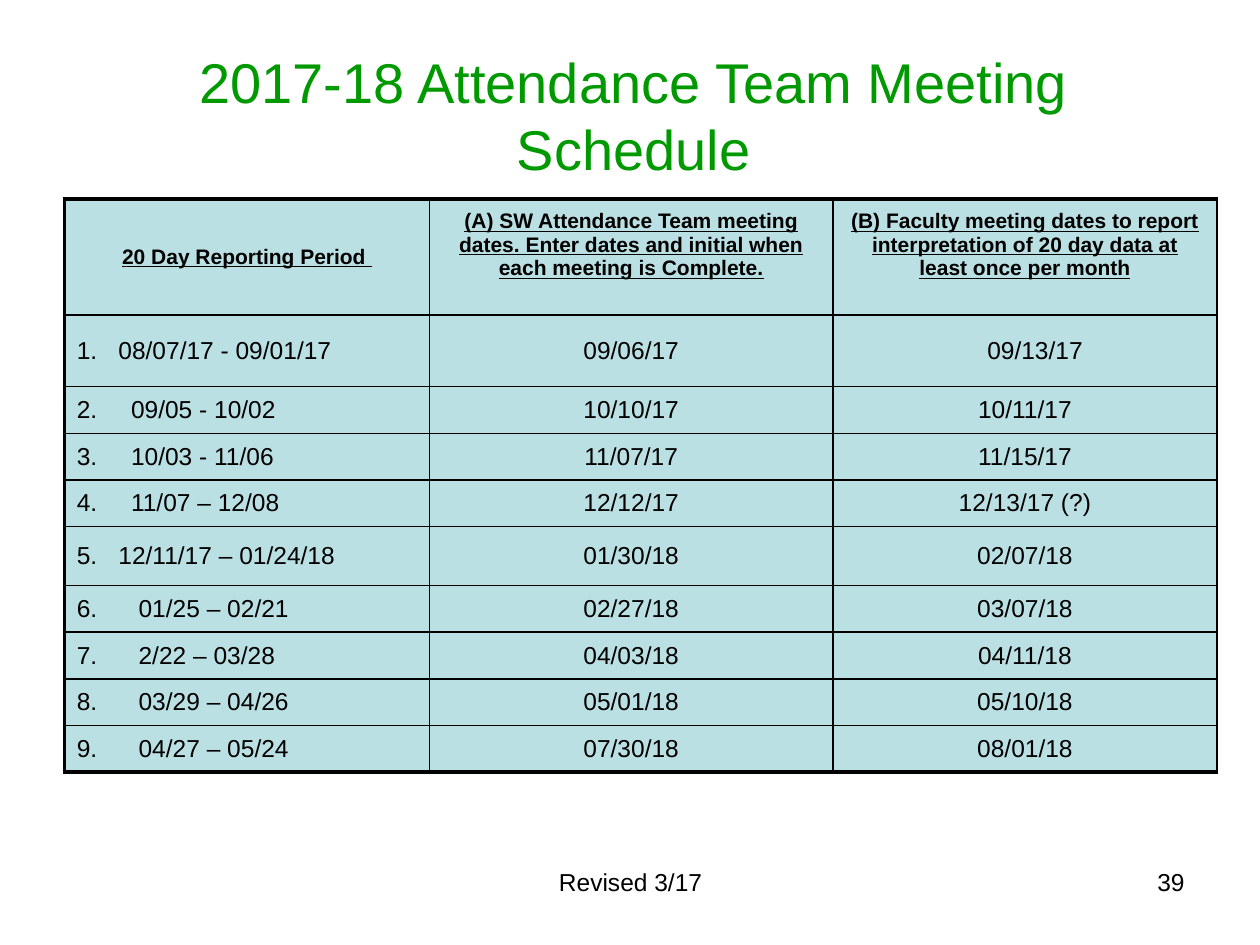
from lxml import etree
from pptx import Presentation
from pptx import util as u
from pptx.dml.color import RGBColor
from pptx.enum import text as t
from pptx.oxml import ns

INK, GREEN, PALE = "000000", "009900", "BBE0E3"
COLS = [2.9, 3.2, 3.05]
ROWS = [0.92, 0.57] + [0.37] * 3 + [0.47] + [0.37] * 4
HEADS = [
    "20 Day Reporting Period ",
    "(A) SW Attendance Team meeting dates. Enter dates and initial when each meeting is Complete.",
    "(B) Faculty meeting dates to report interpretation of 20 day data at least once per month",
]
NEAR, MID, FAR = 0.33, 0.43, 0.49
DATES = [
    (NEAR, "08/07/17 - 09/01/17", "09/06/17", "09/13/17"),
    (MID, "09/05 - 10/02", "10/10/17", "10/11/17"),
    (MID, "10/03 - 11/06", "11/07/17", "11/15/17"),
    (MID, "11/07 – 12/08", "12/12/17", "12/13/17 (?)"),
    (NEAR, "12/11/17 – 01/24/18", "01/30/18", "02/07/18"),
    (FAR, "01/25 – 02/21", "02/27/18", "03/07/18"),
    (FAR, "2/22 – 03/28", "04/03/18", "04/11/18"),
    (FAR, "03/29 – 04/26", "05/01/18", "05/10/18"),
    (FAR, "04/27 – 05/24", "07/30/18", "08/01/18"),
]
LEFT, MIDDLE, RIGHT = t.PP_ALIGN.LEFT, t.PP_ALIGN.CENTER, t.PP_ALIGN.RIGHT


def color(code):
    """Turn a hex string into a colour."""
    return RGBColor.from_string(code)


def write(frame, words, size, align, ink=INK, head=False):
    """Add one run to the first paragraph and return the paragraph."""
    para = frame.paragraphs[0]
    para.alignment = align
    run = para.add_run()
    run.text = words
    font = run.font
    font.name, font.size = "Arial", u.Pt(size)
    font.bold, font.underline = head, head
    font.color.rgb = color(ink)
    return para


def label(slide, box, words, size, align, ink=INK, anchor=t.MSO_ANCHOR.TOP, pad=0.1):
    """Place a wrapped line of text in a box."""
    frame = slide.shapes.add_textbox(*map(u.Inches, box)).text_frame
    frame.word_wrap = True
    frame.vertical_anchor = anchor
    frame.margin_left = frame.margin_right = u.Inches(pad)
    write(frame, words, size, align, ink)


def stop(para, place):
    """Set a left tab stop in inches."""
    tabs = etree.SubElement(para._p.get_or_add_pPr(), ns.qn("a:tabLst"))
    etree.SubElement(tabs, ns.qn("a:tab"), pos=str(u.Inches(place)), algn="l")


def edge(cell, row, col):
    """Fill a cell and draw its four borders."""
    cell.fill.solid()
    cell.fill.fore_color.rgb = color(PALE)
    thick = {"L": col == 0, "R": False, "T": row == 0, "B": row == len(ROWS) - 1}
    props = cell._tc.get_or_add_tcPr()
    for spot, (side, bold) in enumerate(thick.items()):
        line = etree.Element(ns.qn(f"a:ln{side}"), w=str(u.Pt(2.25 if bold else 1)))
        fill = etree.SubElement(line, ns.qn("a:solidFill"))
        etree.SubElement(fill, ns.qn("a:srgbClr"), val=INK)
        props.insert(spot, line)


def schedule(slide, box):
    """Build the table of periods and meeting dates."""
    table = slide.shapes.add_table(len(ROWS), len(COLS), *map(u.Inches, box)).table
    for col, width in zip(table.columns, COLS):
        col.width = u.Inches(width)
    for row, height in zip(table.rows, ROWS):
        row.height = u.Inches(height)
    for r in range(len(ROWS)):
        for c in range(len(COLS)):
            cell = table.cell(r, c)
            cell.vertical_anchor = t.MSO_ANCHOR.MIDDLE
            edge(cell, r, c)
            if r == 0:
                write(cell.text_frame, HEADS[c], 12, MIDDLE, head=True)
                if c:
                    cell.margin_bottom = u.Inches(0.24)
                continue
            tab, *words = DATES[r - 1]
            if c:
                write(cell.text_frame, words[c - 1 + 1], 14, MIDDLE)
            else:
                stop(write(cell.text_frame, f"{r}.\t{words[0]}", 14, LEFT), tab)
    table.cell(1, 2).margin_left = u.Inches(0.26)


def footer(slide, top, height):
    """Place the revision note and the page number."""
    label(slide, (3.42, top, 3.17, height), "Revised 3/17", 14, MIDDLE)
    label(slide, (7.17, top, 2.33, height), "39", 14, RIGHT)


def main():
    """Build and save the slide."""
    deck = Presentation()
    deck.slide_width, deck.slide_height = u.Inches(10), u.Inches(7.5)
    slide = deck.slides.add_slide(deck.slide_layouts[6])
    footer(slide, 6.83, 0.52)
    label(slide, (0.53, 0.37, 9, 1.08), "2017-18 Attendance Team Meeting Schedule",
          32, MIDDLE, GREEN, t.MSO_ANCHOR.MIDDLE, 0.2)
    schedule(slide, (0.51, 1.58, sum(COLS), sum(ROWS)))
    deck.save("out.pptx")


if __name__ == "__main__":
    main()
